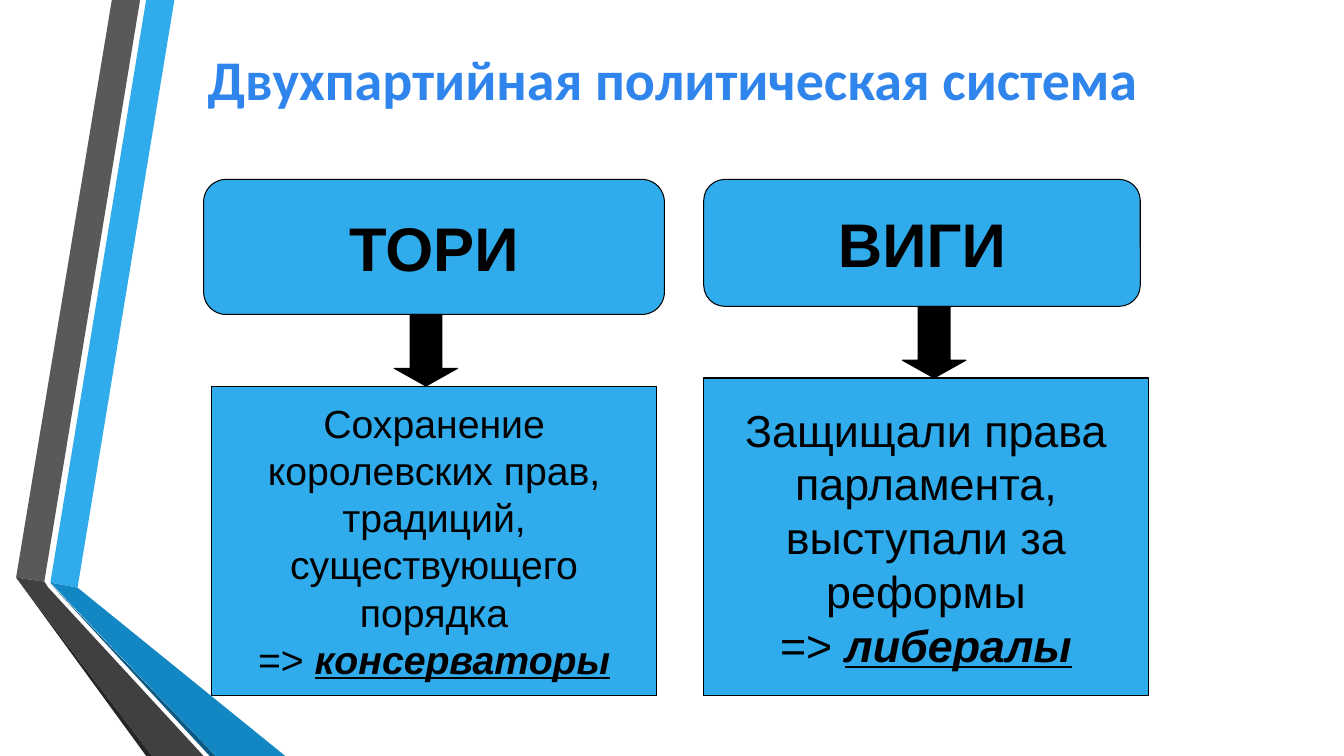
"""Build the slide about the two-party political system."""
from pptx import Presentation
from pptx.dml.color import RGBColor
from pptx.enum.shapes import MSO_SHAPE as Preset
from pptx.enum.text import MSO_ANCHOR as Anchor, PP_ALIGN as Align
from pptx.util import Pt

PX = 9144
COLORS = {
    "title": "3085ED", "sky": "30ACEC", "blue": "1287C3", "navy": "0C5A82",
    "gray": "595959", "charcoal": "404040", "soot": "262626", "ink": "000000",
}
RIBBONS = [
    ("sky", [(50, 578), (77, 583), (173, 0), (145, 0)]),
    ("gray", [(139, 0), (111, 0), (16, 573), (44, 577)]),
    ("soot", [(16, 573), (145, 750), (151, 750)]),
    ("navy", [(50, 579), (208, 750), (214, 750)]),
    ("blue", [(50, 578), (214, 750), (283, 750), (77, 583)]),
    ("charcoal", [(202, 750), (48, 583), (44, 577), (16, 573), (151, 750)]),
]
EMPHASIS = {"bold": True, "italic": True, "underline": True}
PARTIES = [
    {
        "name": "ТОРИ", "header": (202, 178, 457, 134),
        "arrow": (391, 312, 63, 71), "body": (210, 383, 441, 307), "size": 28,
        "aims": ["Сохранение", "королевских прав,", "традиций,",
                 "существующего", "порядка"],
        "wing": "консерваторы",
    },
    {
        "name": "ВИГИ", "header": (698, 178, 433, 126),
        "arrow": (895, 304, 63, 71), "body": (698, 375, 441, 315), "size": 32,
        "aims": ["Защищали права", "парламента,", "выступали за", "реформы"],
        "wing": "либералы",
    },
]


def rgb(color):
    """Return the named colour."""
    return RGBColor.from_string(COLORS[color])


def emu(box):
    """Turn px lengths into EMU."""
    return [length * PX for length in box]


def paint(shape, fill, outline=None):
    """Set the fill and the outline and drop the shadow."""
    shape.shadow.inherit = False
    shape.fill.solid()
    shape.fill.fore_color.rgb = rgb(fill)
    if outline:
        shape.line.color.rgb = rgb(outline)
        shape.line.width = Pt(0.75)
    else:
        shape.line.fill.background()


def write(shape, lines, size, font="Arial", color="ink", wrap=False):
    """Write centred lines, each a list of text and format pairs."""
    frame = shape.text_frame
    frame.word_wrap = wrap
    frame.vertical_anchor = Anchor.MIDDLE
    for index, line in enumerate(lines):
        paragraph = frame.paragraphs[0] if index == 0 else frame.add_paragraph()
        paragraph.alignment = Align.CENTER
        for text, extra in line:
            run = paragraph.add_run()
            run.text = text
            run.font.color.rgb = rgb(color)
            for key, value in {"size": Pt(size), "name": font, **extra}.items():
                setattr(run.font, key, value)


def add_ribbon(slide, color, points):
    """Draw one facet of the folded ribbons."""
    builder = slide.shapes.build_freeform(*points[0], scale=PX)
    builder.add_line_segments(points[1:], close=True)
    paint(builder.convert_to_shape(), color)


def add_title(slide, text):
    """Add the slide heading."""
    heading = slide.shapes.add_textbox(*emu((167, 0, 1000, 155)))
    write(heading, [[(text, {"bold": True})]], 40, "Calibri", "title", True)


def add_block(slide, preset, box, lines, size):
    """Add an outlined block with text."""
    block = slide.shapes.add_shape(preset, *emu(box))
    paint(block, "sky", "ink")
    write(block, lines, size)


def add_arrow(slide, box):
    """Add the arrow from a party name to its aims."""
    arrow = slide.shapes.add_shape(Preset.DOWN_ARROW, *emu(box))
    arrow.adjustments[0] = 0.5
    arrow.adjustments[1] = 0.28
    paint(arrow, "ink", "ink")


def add_party(slide, party):
    """Add the name, aims and arrow of a party."""
    add_block(slide, Preset.FLOWCHART_ALTERNATE_PROCESS, party["header"],
              [[(party["name"], {"bold": True})]], 44)
    aims = [[(aim, {})] for aim in party["aims"]]
    aims.append([("=> ", {}), (party["wing"], EMPHASIS)])
    add_block(slide, Preset.RECTANGLE, party["body"], aims, party["size"])
    add_arrow(slide, party["arrow"])


def main():
    """Build and save the presentation."""
    deck = Presentation()
    deck.slide_width, deck.slide_height = emu((1333, 750))
    slide = deck.slides.add_slide(deck.slide_layouts[6])
    for color, points in RIBBONS:
        add_ribbon(slide, color, points)
    add_title(slide, "Двухпартийная политическая система")
    for party in PARTIES:
        add_party(slide, party)
    deck.save("out.pptx")


if __name__ == "__main__":
    main()
